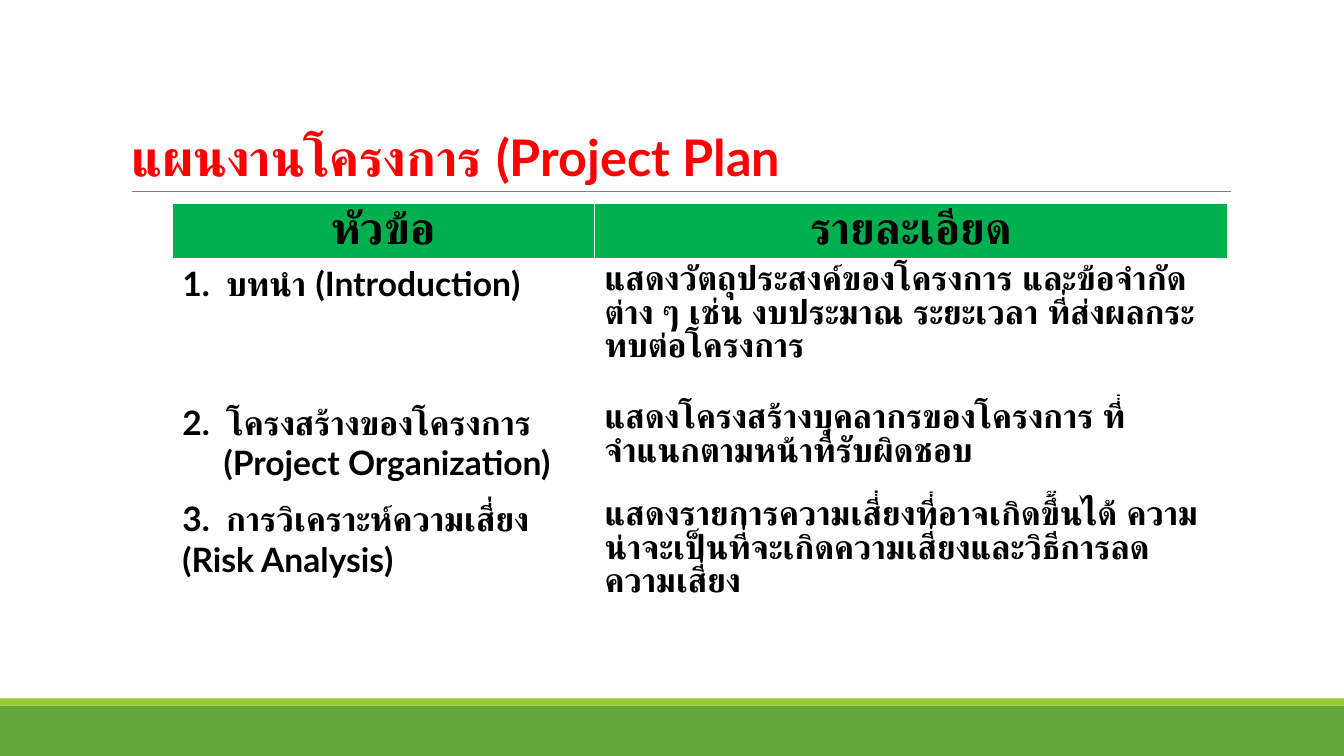
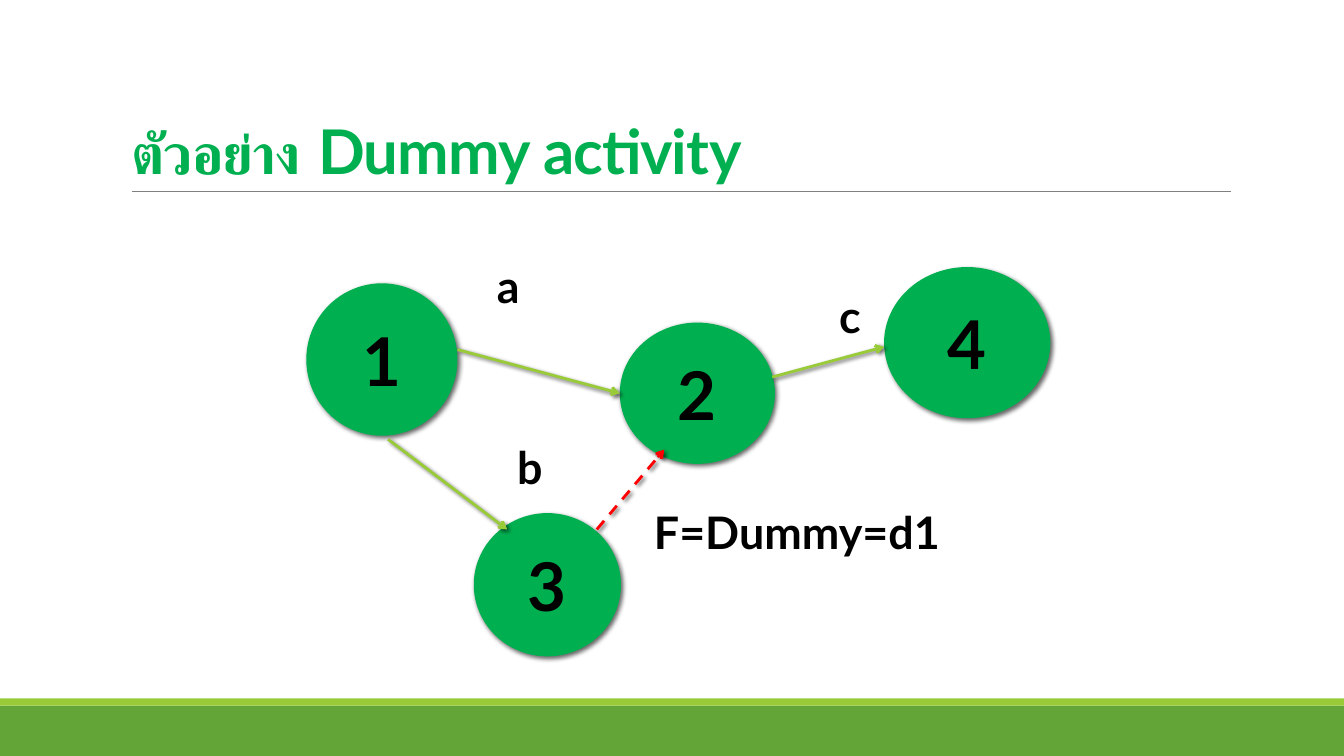
from collections import namedtuple

from lxml import etree
from pptx import Presentation
from pptx.dml.color import RGBColor
from pptx.enum.dml import MSO_LINE
from pptx.enum.shapes import MSO_CONNECTOR, MSO_SHAPE
from pptx.enum.text import MSO_ANCHOR, PP_ALIGN
from pptx.oxml.ns import qn
from pptx.util import Cm, Pt

RECTANGLE, ELLIPSE = MSO_SHAPE.RECTANGLE, MSO_SHAPE.OVAL
STRAIGHT, DASH = MSO_CONNECTOR.STRAIGHT, MSO_LINE.DASH
LEFT, CENTER = PP_ALIGN.LEFT, PP_ALIGN.CENTER
MIDDLE, BOTTOM = MSO_ANCHOR.MIDDLE, MSO_ANCHOR.BOTTOM

GREEN = RGBColor(0x00, 0xB0, 0x50)
BAND_GREEN = RGBColor(0x63, 0xA5, 0x37)
LIME = RGBColor(0x99, 0xCB, 0x38)
GREY = RGBColor(0x80, 0x80, 0x80)
RED = RGBColor(0xFF, 0x00, 0x00)
BLACK = RGBColor(0x00, 0x00, 0x00)
WHITE = RGBColor(0xFF, 0xFF, 0xFF)
FONT = "Lato"
TITLE_ONLY = 5

Box = namedtuple("Box", "left top width height")
SLIDE = Box(0, 0, 33.87, 19.05)
TITLE = Box(3.05, 0.79, 27.94, 4.04)
PLAN = Box(4.34, 5.13, 26.6, 10.58)
NETWORK = Box(7.72, 6.4, 18.75, 10.14)

PLAN_HEADINGS = ["หัวข้อ", "รายละเอียด"]
PLAN_ROWS = [
    (["1.  บทนำ (Introduction)"],
     ["แสดงวัตถุประสงค์ของโครงการ และข้อจำกัดต่าง ๆ เช่น งบประมาณ ระยะเวลา ที่ส่งผลกระทบต่อโครงการ"]),
    (["2.  โครงสร้างของโครงการ", "(Project Organization)"],
     ["แสดงโครงสร้างบุคลากรของโครงการ ที่จำแนกตามหน้าที่รับผิดชอบ"]),
    (["3.  การวิเคราะห์ความเสี่ยง (Risk Analysis)"],
     ["แสดงรายการความเสี่ยงที่อาจเกิดขึ้นได้ ความน่าจะเป็นที่จะเกิดความเสี่ยงและวิธีการลดความเสี่ยง"]),
]
COLUMN_SHARES = (0.4, 0.6)
ROW_SHARES = (0.11, 0.33, 0.23, 0.33)

NODES = [
    ("1", Box(0, 0.74, 3.81, 3.84)),
    ("2", Box(7.9, 1.73, 3.91, 3.56)),
    ("4", Box(14.56, 0.33, 4.19, 3.81)),
    ("3", Box(4.22, 6.53, 3.71, 3.61)),
]
ACTIVITIES = [
    ((3.81, 2.41), (7.9, 3.51), LIME, None),
    ((11.74, 3.1), (14.56, 2.34), LIME, None),
    ((2.06, 4.67), (5.06, 6.94), LIME, None),
    ((7.32, 6.94), (9.02, 4.93), RED, DASH),
]
LABELS = [
    ("a", Box(4.55, 0, 1.27, 1.63)),
    ("c", Box(13.18, 0.74, 1.27, 1.63)),
    ("b", Box(5.06, 4.55, 1.27, 1.63)),
    ("F=Dummy=d1", Box(8.51, 6.2, 9.4, 1.63)),
]


def lengths(box, origin=SLIDE):
    return (Cm(origin.left + box.left), Cm(origin.top + box.top),
            Cm(box.width), Cm(box.height))


def add_span(para, text, size, color=BLACK):
    span = para.add_run()
    span.text = text
    span.font.name = FONT
    span.font.size = Pt(size)
    span.font.bold = True
    span.font.color.rgb = color
    return span


def set_effects(shape, blur=None):
    properties = shape.element.spPr
    for old in properties.findall(qn("a:effectLst")):
        properties.remove(old)
    effects = etree.SubElement(properties, qn("a:effectLst"))
    if blur is not None:
        shadow = etree.SubElement(effects, qn("a:outerShdw"), blurRad=str(Pt(blur)),
                                  dist=str(Pt(2)), dir="2700000", algn="tl", rotWithShape="0")
        color = etree.SubElement(shadow, qn("a:srgbClr"), val=str(BLACK))
        etree.SubElement(color, qn("a:alpha"), val="60000")


def add_filled(page, kind, box, color, origin=SLIDE):
    shape = page.shapes.add_shape(kind, *lengths(box, origin))
    shape.shadow.inherit = False
    shape.fill.solid()
    shape.fill.fore_color.rgb = color
    shape.line.fill.background()
    return shape


def add_line(page, start, end, color, width, origin=SLIDE):
    line = page.shapes.add_connector(
        STRAIGHT, Cm(origin.left + start[0]), Cm(origin.top + start[1]),
        Cm(origin.left + end[0]), Cm(origin.top + end[1]))
    line.line.color.rgb = color
    line.line.width = Pt(width)
    set_effects(line)
    return line


def decorate_master(deck, page):
    decorations = [
        add_filled(page, RECTANGLE, Box(0, 17.78, SLIDE.width, 1.27), BAND_GREEN),
        add_filled(page, RECTANGLE, Box(0, 17.6, SLIDE.width, 0.18), LIME),
        add_line(page, (3.33, 4.83), (31.01, 4.83), GREY, 0.5),
    ]
    for shape in decorations:
        deck.slide_master.shapes.element.append(shape.element)


def add_page(deck, title_spans, color):
    page = deck.slides.add_slide(deck.slide_layouts[TITLE_ONLY])
    title = page.shapes.title
    title.left, title.top, title.width, title.height = lengths(TITLE)
    title.text_frame.vertical_anchor = BOTTOM
    para = title.text_frame.paragraphs[0]
    para.alignment = LEFT
    para.line_spacing = 0.85
    for text, size, spacing in title_spans:
        span = add_span(para, text, size, color)
        span.font._element.set("spc", str(spacing))
    return page


def fill_cell(cell, lines, size, color, alignment):
    cell.fill.solid()
    cell.fill.fore_color.rgb = color
    for index, text in enumerate(lines):
        para = cell.text_frame.add_paragraph() if index else cell.text_frame.paragraphs[0]
        para.alignment = alignment
        if index:
            para._p.get_or_add_pPr().set("marL", str(Cm(1.04)))
        add_span(para, text, size)


def add_plan_table(page, box):
    table = page.shapes.add_table(len(ROW_SHARES), len(COLUMN_SHARES), *lengths(box)).table
    table.horz_banding = False
    for column, share in zip(table.columns, COLUMN_SHARES):
        column.width = Cm(box.width * share)
    for row, share in zip(table.rows, ROW_SHARES):
        row.height = Cm(box.height * share)
    for column, heading in enumerate(PLAN_HEADINGS):
        fill_cell(table.cell(0, column), [heading], 32, GREEN, CENTER)
    for row, cells in enumerate(PLAN_ROWS, start=1):
        for column, lines in enumerate(cells):
            fill_cell(table.cell(row, column), lines, 24, WHITE, LEFT)


def add_node(page, text, box, origin):
    node = add_filled(page, ELLIPSE, box, GREEN, origin)
    set_effects(node, 3.5)
    node.text_frame.vertical_anchor = MIDDLE
    para = node.text_frame.paragraphs[0]
    para.alignment = CENTER
    add_span(para, text, 48)


def add_activity(page, start, end, color, dash, origin):
    arrow = add_line(page, start, end, color, 2, origin)
    if dash is not None:
        arrow.line.dash_style = dash
    etree.SubElement(arrow.line._get_or_add_ln(), qn("a:tailEnd"), type="arrow")
    set_effects(arrow, 3)


def add_label(page, text, box, origin):
    label = page.shapes.add_textbox(*lengths(box, origin))
    label.text_frame.word_wrap = True
    add_span(label.text_frame.paragraphs[0], text, 32)


def add_network(page, box):
    for text, place in NODES:
        add_node(page, text, place, box)
    for start, end, color, dash in ACTIVITIES:
        add_activity(page, start, end, color, dash, box)
    for text, place in LABELS:
        add_label(page, text, place, box)


def main():
    deck = Presentation()
    deck.slide_width, deck.slide_height = Cm(SLIDE.width), Cm(SLIDE.height)
    plan_page = add_page(deck, [("แผนงานโครงการ (Project Plan", 36, 0)], RED)
    decorate_master(deck, plan_page)
    add_plan_table(plan_page, PLAN)
    network_page = add_page(
        deck, [("ตัวอย่าง", 40, -50), (" Dummy activity", 44, -50)], GREEN)
    add_network(network_page, NETWORK)
    deck.save("out.pptx")


if __name__ == "__main__":
    main()
